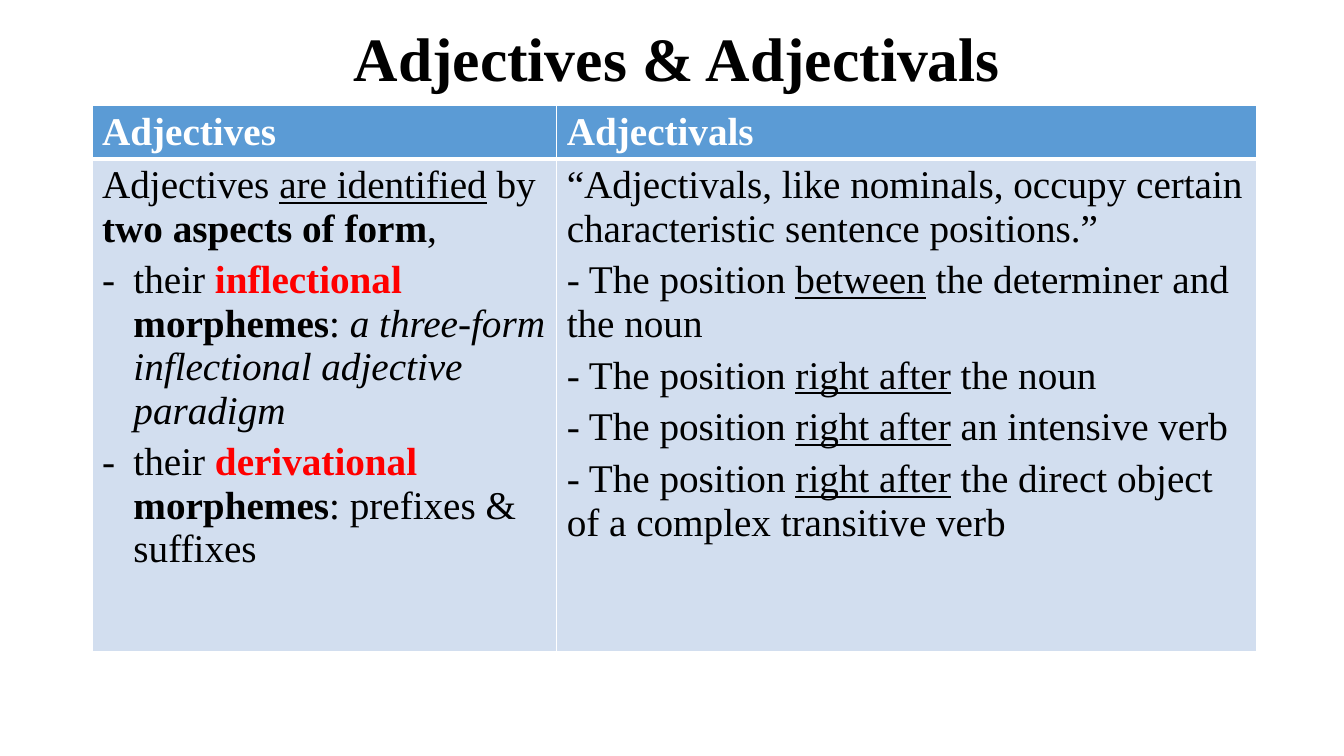
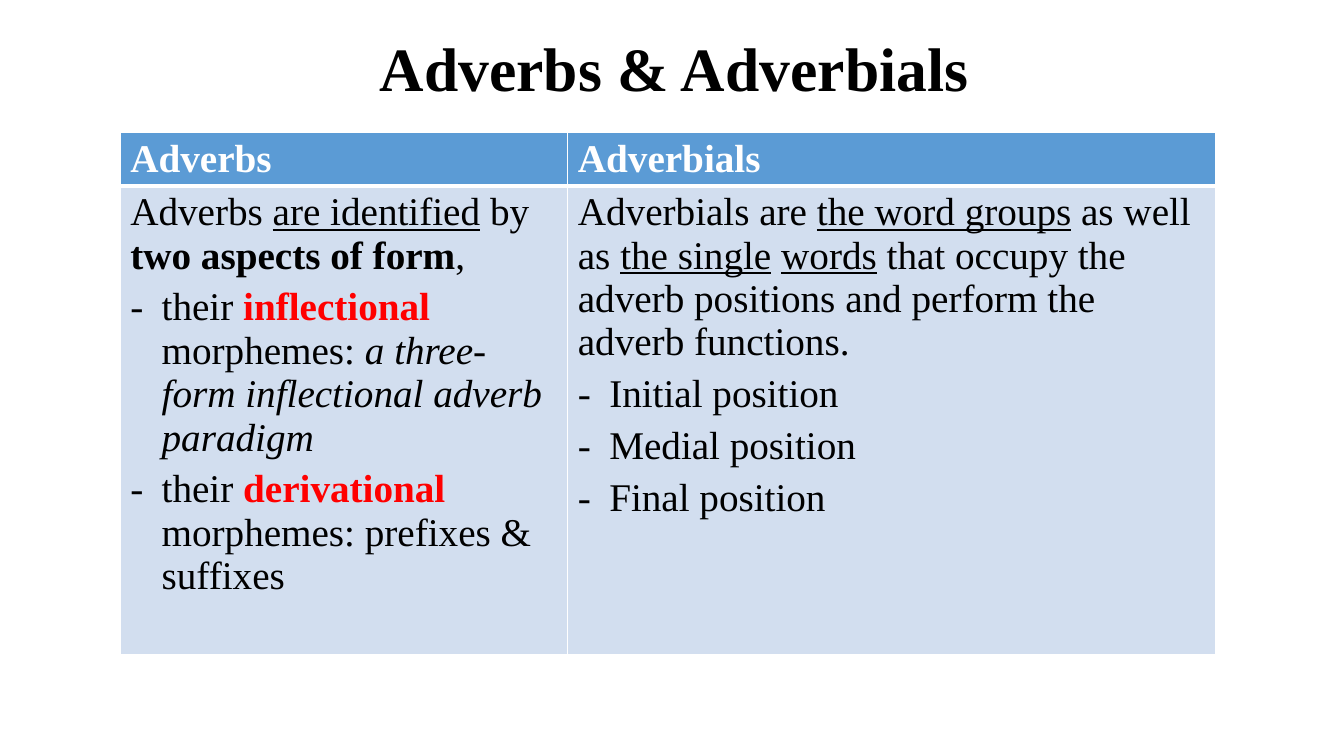
from lxml import etree
from pptx import Presentation
from pptx import util as u
from pptx.dml.color import RGBColor
from pptx.enum import text
from pptx.oxml.ns import qn

FONT = "Times New Roman"
BLACK, WHITE, RED = "000000", "FFFFFF", "FF0000"
HEADER_FILL, BODY_FILL = "5B9BD5", "D2DEEF"
HEADER_HEIGHT = 1.35
DASH_INDENT = 0.79


def color(value):
    """Turn a hex string into a colour."""
    return RGBColor.from_string(value)


class Lesson:
    """Holds the deck, its style and the current page."""

    def __init__(self):
        """Start a wide deck."""
        self.deck = Presentation()
        self.deck.slide_width = u.Cm(33.87)
        self.deck.slide_height = u.Cm(19.05)
        self.page = None

    def style(self, paragraph, size, hue, bold=False):
        """Set the font shared by a paragraph's spans."""
        font = paragraph.font
        font.name, font.size, font.bold = FONT, u.Pt(size), bold
        font.color.rgb = color(hue)

    def title(self, words, left, top, height):
        """Add a page with a centred title."""
        self.page = self.deck.slides.add_slide(self.deck.slide_layouts[5])
        box = self.page.shapes.title
        box.left, box.top = u.Cm(left), u.Cm(top)
        box.width, box.height = u.Cm(29.21), u.Cm(height)
        frame = box.text_frame
        frame.text = words
        frame.word_wrap = True
        frame.auto_size = text.MSO_AUTO_SIZE.NONE
        frame.vertical_anchor = text.MSO_ANCHOR.MIDDLE
        paragraph = frame.paragraphs[0]
        paragraph.alignment = text.PP_ALIGN.CENTER
        paragraph.line_spacing = 0.9
        self.style(paragraph, 44, BLACK, True)

    def dash(self, paragraph):
        """Give a paragraph a hanging dash."""
        properties = paragraph._p.get_or_add_pPr()
        indent = u.Cm(DASH_INDENT)
        properties.set("marL", str(indent))
        properties.set("indent", str(-indent))
        etree.SubElement(properties, qn("a:buFont"), typeface=FONT)
        etree.SubElement(properties, qn("a:buChar"), char="-")

    def borders(self, cell, top, bottom):
        """Draw white borders around a cell."""
        properties = cell._tc.get_or_add_tcPr()
        for side, width in (("L", 1), ("R", 1), ("T", top), ("B", bottom)):
            line = etree.SubElement(properties, qn(f"a:ln{side}"), w=str(u.Pt(width)))
            fill = etree.SubElement(line, qn("a:solidFill"))
            etree.SubElement(fill, qn("a:srgbClr"), val=WHITE)

    def cell(self, cell, paragraphs, header):
        """Fill a cell with (dashed, spans) paragraphs; span marks are b, i, u and r for red."""
        self.borders(cell, *((1, 3) if header else (3, 1)))
        cell.fill.solid()
        cell.fill.fore_color.rgb = color(HEADER_FILL if header else BODY_FILL)
        frame = cell.text_frame
        for number, (dashed, spans) in enumerate(paragraphs):
            paragraph = frame.add_paragraph() if number else frame.paragraphs[0]
            paragraph.space_after = u.Pt(6)
            if dashed:
                self.dash(paragraph)
            self.style(paragraph, 28, WHITE if header else BLACK, header)
            for words, marks in spans:
                span = paragraph.add_run()
                span.text = words
                if "b" in marks:
                    span.font.bold = True
                if "i" in marks:
                    span.font.italic = True
                if "u" in marks:
                    span.font.underline = True
                if "r" in marks:
                    span.font.color.rgb = color(RED)

    def table(self, left, top, widths, body_height, columns):
        """Add a comparison table from (heading, paragraphs) columns."""
        heights = (HEADER_HEIGHT, body_height)
        frame = self.page.shapes.add_table(
            2, len(columns), u.Cm(left), u.Cm(top), u.Cm(sum(widths)), u.Cm(sum(heights)))
        table = frame.table
        for row, height in zip(table.rows, heights):
            row.height = u.Cm(height)
        for index, (heading, paragraphs) in enumerate(columns):
            table.columns[index].width = u.Cm(widths[index])
            self.cell(table.cell(0, index), [(False, [(heading, "")])], True)
            self.cell(table.cell(1, index), paragraphs, False)


def form_aspects(kind, noun_marks):
    """List the two aspects of form of a word class."""
    return [
        (False, [(f"{kind}s ", ""), ("are identified", "u"), (" by ", ""),
                 ("two aspects of form", "b"), (",", "")]),
        (True, [("their ", ""), ("inflectional ", "br"), ("morphemes", noun_marks), (": ", ""),
                (f"a three-form inflectional {kind.lower()} paradigm", "i")]),
        (True, [("their ", ""), ("derivational ", "br"), ("morphemes", noun_marks),
                (": prefixes & suffixes", "")]),
    ]


def main():
    """Build both pages and save the deck."""
    lesson = Lesson()

    positions = [("between", "the determiner and the noun"),
                 ("right after", "the noun"),
                 ("right after", "an intensive verb"),
                 ("right after", "the direct object of a complex transitive verb")]
    adjectivals = [(False, [("“Adjectivals, like nominals, occupy certain "
                             "characteristic sentence positions.”", "")])]
    adjectivals += [(False, [("- The position ", ""), (place, "u"), (f" {target}", "")])
                    for place, target in positions]
    lesson.title("Adjectives & Adjectivals", 2.46, 0.48, 2.16)
    lesson.table(2.32, 2.65, (11.71, 17.65), 12.42,
                 [("Adjectives", form_aspects("Adjective", "b")),
                  ("Adjectivals", adjectivals)])

    adverbials = [(False, [("Adverbials are ", ""), ("the word groups", "u"), (" as well as ", ""),
                           ("the single", "u"), (" ", ""), ("words", "u"), (" ", "i"),
                           ("that occupy the adverb positions and perform the "
                            "adverb functions.", "")])]
    adverbials += [(True, [(f"{place} position", "")]) for place in ("Initial", "Medial", "Final")]
    lesson.title("Adverbs & Adverbials", 2.39, 0.69, 2.21)
    lesson.table(3.03, 3.33, (11.28, 16.33), 11.81,
                 [("Adverbs", form_aspects("Adverb", "")),
                  ("Adverbials", adverbials)])

    lesson.deck.save("out.pptx")


if __name__ == "__main__":
    main()
